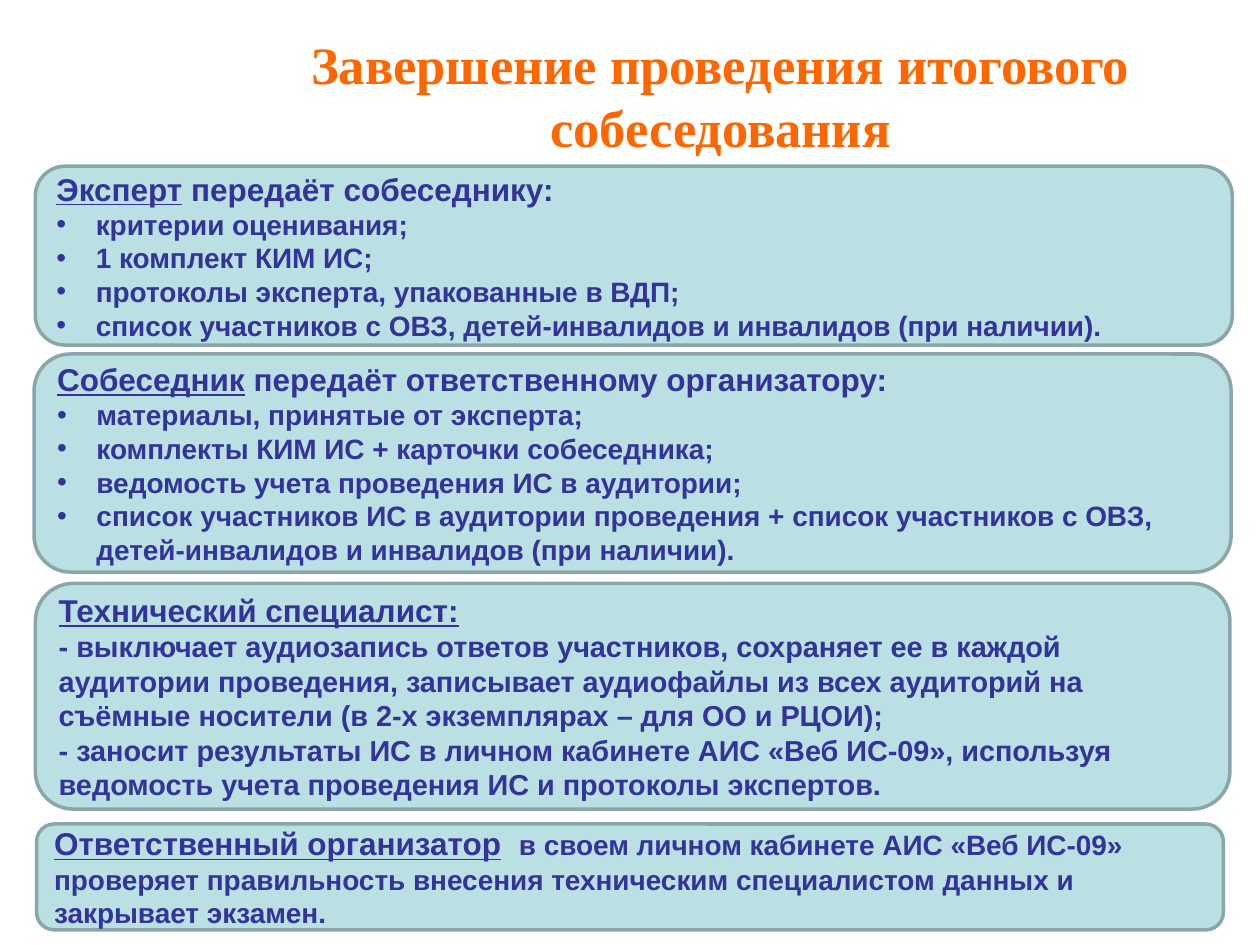
from dataclasses import dataclass

from lxml.etree import SubElement
from pptx import Presentation
from pptx.dml.color import RGBColor
from pptx.enum.shapes import MSO_SHAPE
from pptx.enum.text import MSO_ANCHOR, PP_ALIGN
from pptx.oxml.ns import qn
from pptx.util import Pt


@dataclass(frozen=True)
class Theme:
    title_font: str = "Times New Roman"
    body_font: str = "Arial"
    title_color: RGBColor = RGBColor(0xFF, 0x66, 0x00)
    text_color: RGBColor = RGBColor(0x33, 0x33, 0x99)
    panel_fill: RGBColor = RGBColor(0xBB, 0xE0, 0xE3)
    panel_line: RGBColor = RGBColor(0x8A, 0xA6, 0xA8)
    title_size: float = 30
    role_size: float = 18
    item_size: float = 16
    task_size: float = 16.5


THEME = Theme()
BULLET_INDENT = Pt(22.5)


def style_run(r, size, color=THEME.text_color, font=THEME.body_font, underline=False):
    r.font.name = font
    r.font.size = Pt(size)
    r.font.bold = True
    r.font.underline = underline
    r.font.color.rgb = color


def add_run(p, text, size, underline=False):
    r = p.add_run()
    r.text = text
    style_run(r, size, underline=underline)


def add_title(s, text, box):
    tf = s.shapes.add_textbox(*map(Pt, box)).text_frame
    tf.word_wrap = True
    tf.vertical_anchor = MSO_ANCHOR.MIDDLE
    tf.text = text
    p = tf.paragraphs[0]
    p.alignment = PP_ALIGN.CENTER
    style_run(p.runs[0], THEME.title_size, THEME.title_color, THEME.title_font)


def add_panel(s, box, role, action=""):
    """Add a rounded panel headed by an underlined role; return its text frame."""
    sp = s.shapes.add_shape(MSO_SHAPE.ROUNDED_RECTANGLE, *map(Pt, box))
    sp.shadow.inherit = False
    sp.fill.solid()
    sp.fill.fore_color.rgb = THEME.panel_fill
    sp.line.color.rgb = THEME.panel_line
    sp.line.width = Pt(2)
    tf = sp.text_frame
    tf.word_wrap = True
    tf.vertical_anchor = MSO_ANCHOR.MIDDLE
    p = tf.paragraphs[0]
    p.alignment = PP_ALIGN.LEFT
    add_run(p, role, THEME.role_size, underline=True)
    if action:
        add_run(p, action, THEME.role_size)
    return tf


def set_bullet(p):
    pPr = p._p.get_or_add_pPr()
    pPr.set("marL", str(BULLET_INDENT))
    pPr.set("indent", str(-BULLET_INDENT))
    SubElement(pPr, qn("a:buFont")).set("typeface", THEME.body_font)
    SubElement(pPr, qn("a:buChar")).set("char", "•")


def add_lines(tf, lines, size, bulleted=False):
    for text in lines:
        p = tf.add_paragraph()
        p.alignment = PP_ALIGN.LEFT
        if bulleted:
            set_bullet(p)
        add_run(p, text, size)


def main():
    prs = Presentation()
    prs.slide_width, prs.slide_height = Pt(720), Pt(540)
    s = prs.slides.add_slide(prs.slide_layouts[6])

    add_title(s, "Завершение проведения итогового собеседования", (87.8, 9.4, 648, 90))

    expert = add_panel(s, (20.2, 95, 684, 102.2), "Эксперт", " передаёт собеседнику:")
    add_lines(expert, (
        "критерии оценивания;",
        "1 комплект КИМ ИС;",
        "протоколы эксперта, упакованные в ВДП;",
        "список участников с ОВЗ, детей-инвалидов и инвалидов (при наличии).",
    ), THEME.item_size, bulleted=True)

    interviewer = add_panel(s, (19.5, 202.3, 684, 124.6), "Собеседник",
                            " передаёт ответственному организатору:")
    add_lines(interviewer, (
        "материалы, принятые от эксперта;",
        "комплекты КИМ ИС + карточки собеседника;",
        "ведомость учета проведения ИС в аудитории;",
        "список участников ИС в аудитории проведения + список участников с ОВЗ, "
        "детей-инвалидов и инвалидов (при наличии).",
    ), THEME.item_size, bulleted=True)

    technician = add_panel(s, (20.2, 333.4, 682.6, 128.9), "Технический специалист:")
    add_lines(technician, (
        "- выключает аудиозапись ответов участников, сохраняет ее в каждой аудитории "
        "проведения, записывает аудиофайлы из всех аудиторий на съёмные носители "
        "(в 2-х экземплярах – для ОО и РЦОИ);",
        "- заносит результаты ИС в личном кабинете АИС «Веб ИС-09», используя "
        "ведомость учета проведения ИС и протоколы экспертов.",
    ), THEME.task_size)

    organizer = add_panel(s, (20.9, 470.9, 678.2, 60.5), "Ответственный организатор", "  ")
    add_run(organizer.paragraphs[0],
            "в своем личном кабинете АИС «Веб ИС-09» проверяет правильность внесения "
            "техническим специалистом данных и закрывает экзамен.", THEME.item_size)

    prs.save("out.pptx")


if __name__ == "__main__":
    main()
